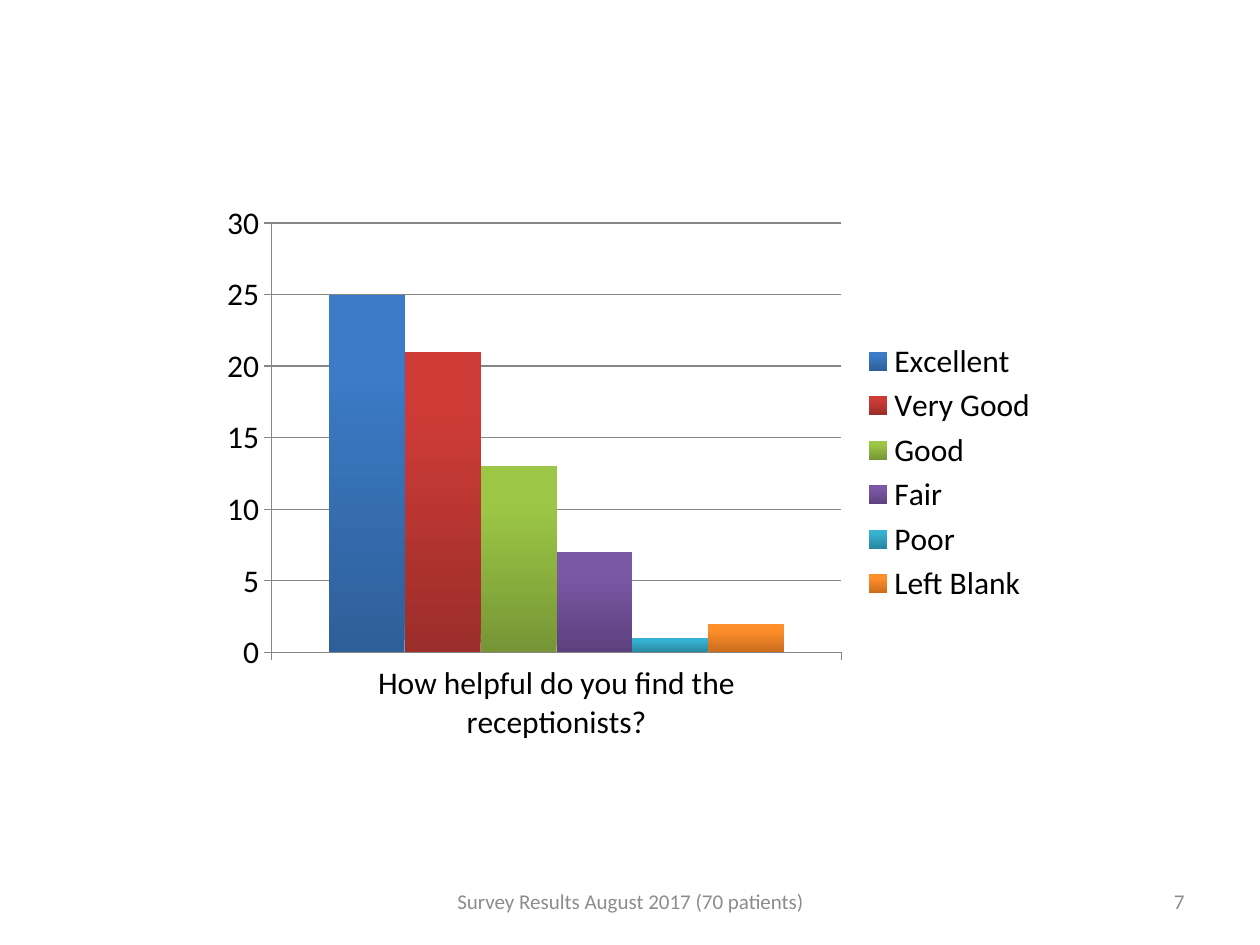
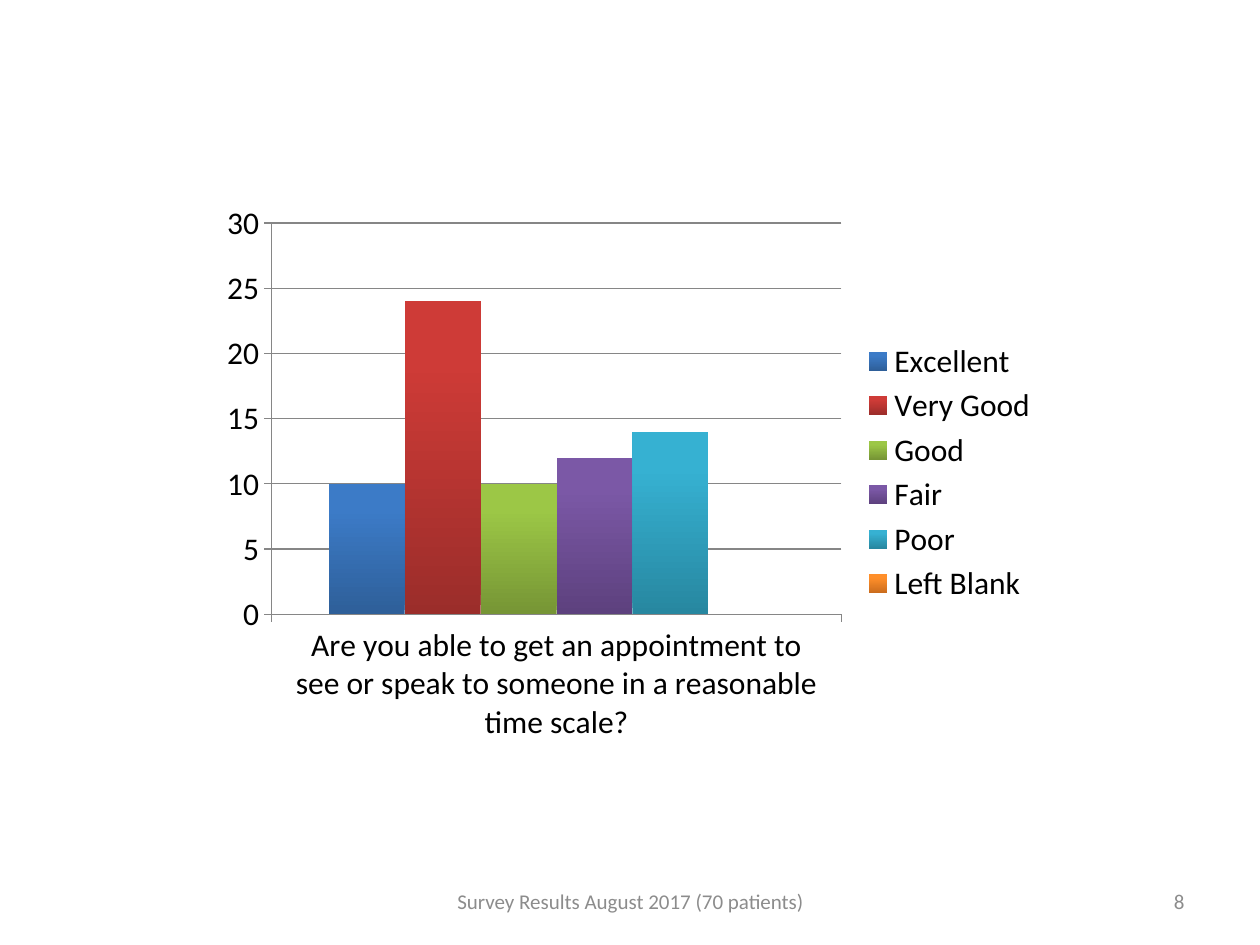
from pptx import Presentation
from pptx.chart.data import CategoryChartData
from pptx.dml.color import RGBColor
from pptx.enum.chart import XL_CHART_TYPE, XL_LEGEND_POSITION, XL_TICK_MARK
from pptx.enum.text import MSO_ANCHOR, PP_ALIGN
from pptx.util import Inches, Pt

COLUMN_CLUSTERED = XL_CHART_TYPE.COLUMN_CLUSTERED
LEGEND_RIGHT = XL_LEGEND_POSITION.RIGHT
TICK_OUTSIDE = XL_TICK_MARK.OUTSIDE
MIDDLE = MSO_ANCHOR.MIDDLE
CENTER, RIGHT = PP_ALIGN.CENTER, PP_ALIGN.RIGHT

FONT = "Calibri"
BLACK = RGBColor(0x00, 0x00, 0x00)
AXIS_GRAY = RGBColor(0x86, 0x86, 0x86)
FOOTER_GRAY = RGBColor(0x8C, 0x8C, 0x8C)

# Each rating with the bottom and top colour of its column
RATINGS = [
    ("Excellent", RGBColor(0x2E, 0x5F, 0x99), RGBColor(0x3C, 0x7B, 0xC7)),
    ("Very Good", RGBColor(0x9B, 0x2D, 0x2A), RGBColor(0xCE, 0x3B, 0x37)),
    ("Good", RGBColor(0x76, 0x95, 0x35), RGBColor(0x9C, 0xC7, 0x46)),
    ("Fair", RGBColor(0x5D, 0x41, 0x7E), RGBColor(0x7B, 0x58, 0xA6)),
    ("Poor", RGBColor(0x27, 0x87, 0xA0), RGBColor(0x36, 0xB1, 0xD2)),
    ("Left Blank", RGBColor(0xCB, 0x6C, 0x1D), RGBColor(0xFF, 0x8F, 0x2A)),
]

FIRST_PAGE = 7
FOOTER = "Survey Results August 2017 (70 patients)"
QUESTIONS = [
    ("How helpful do you find the receptionists?", [25, 21, 13, 7, 1, 2]),
    ("Are you able to get an appointment to see or speak to someone "
     "in a reasonable time scale?", [10, 24, 10, 12, 14, 0]),
]


def add_footer_text(slide, text, left, width, alignment):
    box = slide.shapes.add_textbox(Inches(left), Inches(6.95), Inches(width), Inches(0.4))
    text_frame = box.text_frame
    text_frame.word_wrap = True
    text_frame.vertical_anchor = MIDDLE
    text_frame.text = text
    paragraph = text_frame.paragraphs[0]
    paragraph.alignment = alignment
    font = paragraph.runs[0].font
    font.name = FONT
    font.size = Pt(12)
    font.color.rgb = FOOTER_GRAY


presentation = Presentation()
presentation.slide_width = Inches(10)
presentation.slide_height = Inches(7.5)
blank_layout = presentation.slide_layouts[6]

for page, (question, answers) in enumerate(QUESTIONS, FIRST_PAGE):
    slide = presentation.slides.add_slide(blank_layout)

    # Answers to the question, one series for each rating
    chart_data = CategoryChartData()
    chart_data.categories = [question]
    for (rating, _, _), answer in zip(RATINGS, answers):
        chart_data.add_series(rating, [answer])
    chart = slide.shapes.add_chart(
        COLUMN_CLUSTERED, Inches(1.67), Inches(1.53), Inches(6.67), Inches(4.44), chart_data
    ).chart
    chart.has_title = False
    chart.font.name = FONT
    chart.font.size = Pt(18)
    chart.font.color.rgb = BLACK
    chart.has_legend = True
    chart.legend.position = LEGEND_RIGHT
    chart.legend.include_in_layout = False

    # Columns shaded from dark at the bottom to light at the top
    plot = chart.plots[0]
    plot.gap_width = 150
    plot.overlap = 0
    plot.vary_by_categories = False
    for series, (_, bottom_color, top_color) in zip(plot.series, RATINGS):
        fill = series.format.fill
        fill.gradient()
        fill.gradient_angle = 90
        bottom_stop, top_stop = fill.gradient_stops
        bottom_stop.position, top_stop.position = 0, 0.8
        bottom_stop.color.rgb = bottom_color
        top_stop.color.rgb = top_color

    # Axes and gridlines
    value_axis = chart.value_axis
    value_axis.minimum_scale = 0
    value_axis.maximum_scale = 30
    value_axis.major_unit = 5
    value_axis.has_major_gridlines = True
    for axis in (chart.category_axis, value_axis):
        axis.major_tick_mark = TICK_OUTSIDE
    for line_owner in (chart.category_axis, value_axis, value_axis.major_gridlines):
        line_owner.format.line.color.rgb = AXIS_GRAY
        line_owner.format.line.width = Pt(0.75)

    # Footer and page number
    add_footer_text(slide, str(page), 7.17, 2.33, RIGHT)
    add_footer_text(slide, FOOTER, 3.42, 3.17, CENTER)

presentation.save("out.pptx")
